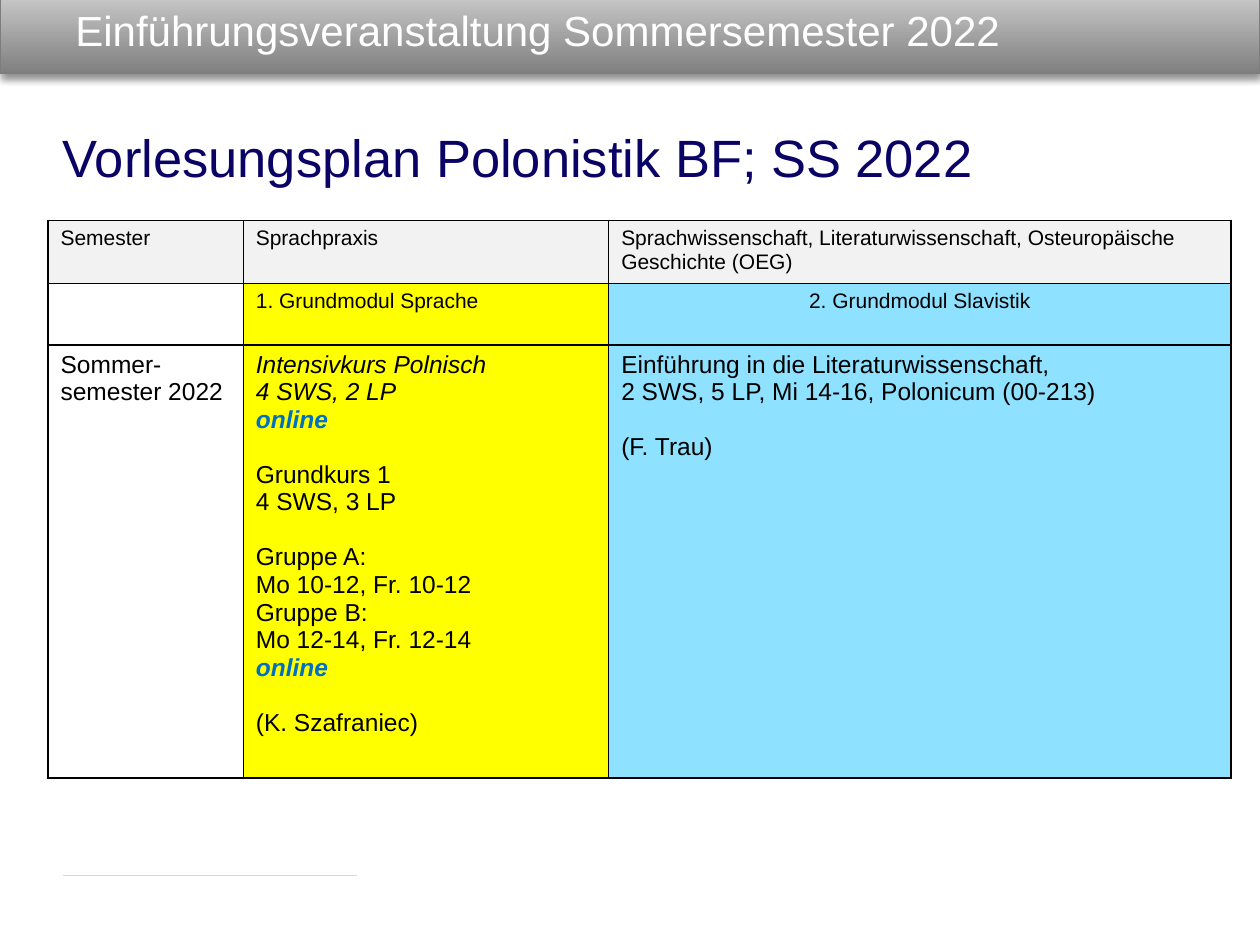
from lxml import etree
from pptx import Presentation
from pptx.dml.color import RGBColor
from pptx.enum.shapes import MSO_CONNECTOR, MSO_SHAPE
from pptx.enum.text import MSO_ANCHOR, PP_ALIGN
from pptx.oxml import parse_xml
from pptx.oxml.ns import nsdecls, qn
from pptx.util import Pt

LEFT, CENTER = PP_ALIGN.LEFT, PP_ALIGN.CENTER
TOP, MIDDLE = MSO_ANCHOR.TOP, MSO_ANCHOR.MIDDLE
RECTANGLE, STRAIGHT = MSO_SHAPE.RECTANGLE, MSO_CONNECTOR.STRAIGHT

BLACK = RGBColor(0x00, 0x00, 0x00)
WHITE = RGBColor(0xFF, 0xFF, 0xFF)
NAVY = RGBColor(0x0A, 0x03, 0x65)
BLUE = RGBColor(0x00, 0x70, 0xC0)
DARK_GRAY = RGBColor(0x80, 0x80, 0x80)
LIGHT_GRAY = RGBColor(0xCD, 0xCD, 0xCD)
EDGE_GRAY = RGBColor(0x7D, 0x7D, 0x7D)
RULE_GRAY = RGBColor(0xD8, 0xD8, 0xD8)
HEAD_GRAY = RGBColor(0xF2, 0xF2, 0xF2)
YELLOW = RGBColor(0xFF, 0xFF, 0x00)
SKY = RGBColor(0x8F, 0xE2, 0xFF)

FONT = "Arial"
BLOCK_GAP = 15.7
BANNER_TITLE = "Einführungsveranstaltung Sommersemester 2022"
HEADING = "Vorlesungsplan Polonistik BF; SS 2022"
ONLINE = "online"
ITALIC_LINES = ("Intensivkurs Polnisch", "4 SWS, 2 LP", ONLINE)

COLUMN_WIDTHS = (111.6, 208.8, 355.7)
ROW_HEIGHTS = (36, 35, 247.5)
ROW_SIZES = (12, 12, 14)
FILLS = (
    (HEAD_GRAY, HEAD_GRAY, HEAD_GRAY),
    (None, YELLOW, SKY),
    (None, YELLOW, SKY),
)
SCHEDULE = (
    (
        [["Semester"]],
        [["Sprachpraxis"]],
        [["Sprachwissenschaft, Literaturwissenschaft, Osteuropäische Geschichte (OEG)"]],
    ),
    ([], [["1. Grundmodul Sprache"]], [["2. Grundmodul Slavistik"]]),
    (
        [["Sommer-semester 2022"]],
        [
            ["Intensivkurs Polnisch", "4 SWS, 2 LP", ONLINE],
            ["Grundkurs 1", "4 SWS, 3 LP"],
            ["Gruppe A:", "Mo 10-12, Fr. 10-12", "Gruppe B:", "Mo 12-14, Fr. 12-14", ONLINE],
            ["(K. Szafraniec)"],
        ],
        [
            ["Einführung in die Literaturwissenschaft,", "2 SWS, 5 LP, Mi 14-16, Polonicum (00-213)"],
            ["(F. Trau)"],
        ],
    ),
)


def style(font, size, color):
    font.name = FONT
    font.size = Pt(size)
    font.color.rgb = color


def add_banner(page):
    banner = page.shapes.add_shape(RECTANGLE, Pt(0), Pt(-5.76), Pt(720), Pt(47.5))
    banner.fill.gradient()
    banner.fill.gradient_angle = 90
    for stop, color in zip(banner.fill.gradient_stops, (DARK_GRAY, LIGHT_GRAY)):
        stop.color.rgb = color
    banner.line.color.rgb = EDGE_GRAY
    banner.line.width = Pt(0.75)
    banner.shadow.inherit = False
    effects = banner._element.spPr.find(qn("a:effectLst"))
    effects.append(parse_xml(
        f'<a:outerShdw {nsdecls("a")} blurRad="{Pt(4)}" dist="{Pt(3)}" dir="5400000" rotWithShape="0">'
        '<a:srgbClr val="000000"><a:alpha val="43000"/></a:srgbClr></a:outerShdw>'
    ))


def add_rule(page):
    rule = page.shapes.add_connector(STRAIGHT, Pt(36), Pt(500.4), Pt(204), Pt(500.4))
    rule.line.color.rgb = RULE_GRAY
    rule.line.width = Pt(0.75)
    etree.SubElement(rule._element.spPr, qn("a:effectLst"))


def add_text(page, text, left, top, width, height, size, color, anchor):
    box = page.shapes.add_textbox(Pt(left), Pt(top), Pt(width), Pt(height))
    frame = box.text_frame
    frame.word_wrap = True
    frame.vertical_anchor = anchor
    frame.text = text
    style(frame.paragraphs[0].runs[0].font, size, color)


def add_borders(cell):
    properties = cell._tc.get_or_add_tcPr()
    for index, side in enumerate(("lnL", "lnR", "lnT", "lnB")):
        properties.insert(index, parse_xml(
            f'<a:{side} {nsdecls("a")} w="{Pt(1)}"><a:solidFill>'
            f'<a:srgbClr val="{BLACK}"/></a:solidFill></a:{side}>'
        ))


def fill_cell(cell, blocks, color, size, alignment):
    if color is None:
        cell.fill.background()
    else:
        cell.fill.solid()
        cell.fill.fore_color.rgb = color
    add_borders(cell)
    cell.text_frame.text = "\n".join(line for block in blocks for line in block)
    block_starts = [sum(map(len, blocks[:count])) for count in range(1, len(blocks))]
    for index, paragraph in enumerate(cell.text_frame.paragraphs):
        paragraph.alignment = alignment
        if index in block_starts:
            paragraph.space_before = Pt(BLOCK_GAP)
        for span in paragraph.runs:
            online = span.text == ONLINE
            style(span.font, size, BLUE if online else BLACK)
            span.font.bold = online
            span.font.italic = span.text in ITALIC_LINES


def add_schedule(page):
    frame = page.shapes.add_table(
        len(ROW_HEIGHTS), len(COLUMN_WIDTHS), Pt(27.4), Pt(126),
        Pt(sum(COLUMN_WIDTHS)), Pt(sum(ROW_HEIGHTS)),
    )
    table = frame.table
    table.first_row = False
    table.horz_banding = False
    for column, width in zip(table.columns, COLUMN_WIDTHS):
        column.width = Pt(width)
    for row_index, row in enumerate(table.rows):
        row.height = Pt(ROW_HEIGHTS[row_index])
        for column_index, cell in enumerate(row.cells):
            alignment = CENTER if (row_index, column_index) == (1, 2) else LEFT
            fill_cell(
                cell, SCHEDULE[row_index][column_index], FILLS[row_index][column_index],
                ROW_SIZES[row_index], alignment,
            )


def main():
    deck = Presentation()
    deck.slide_width, deck.slide_height = Pt(720), Pt(540)
    page = deck.slides.add_slide(deck.slide_layouts[6])
    add_banner(page)
    add_rule(page)
    add_text(page, BANNER_TITLE, 36, 0, 667.4, 34, 24, WHITE, MIDDLE)
    add_text(page, HEADING, 28.8, 67.7, 637.2, 44, 30, NAVY, TOP)
    add_schedule(page)
    deck.save("out.pptx")


if __name__ == "__main__":
    main()
